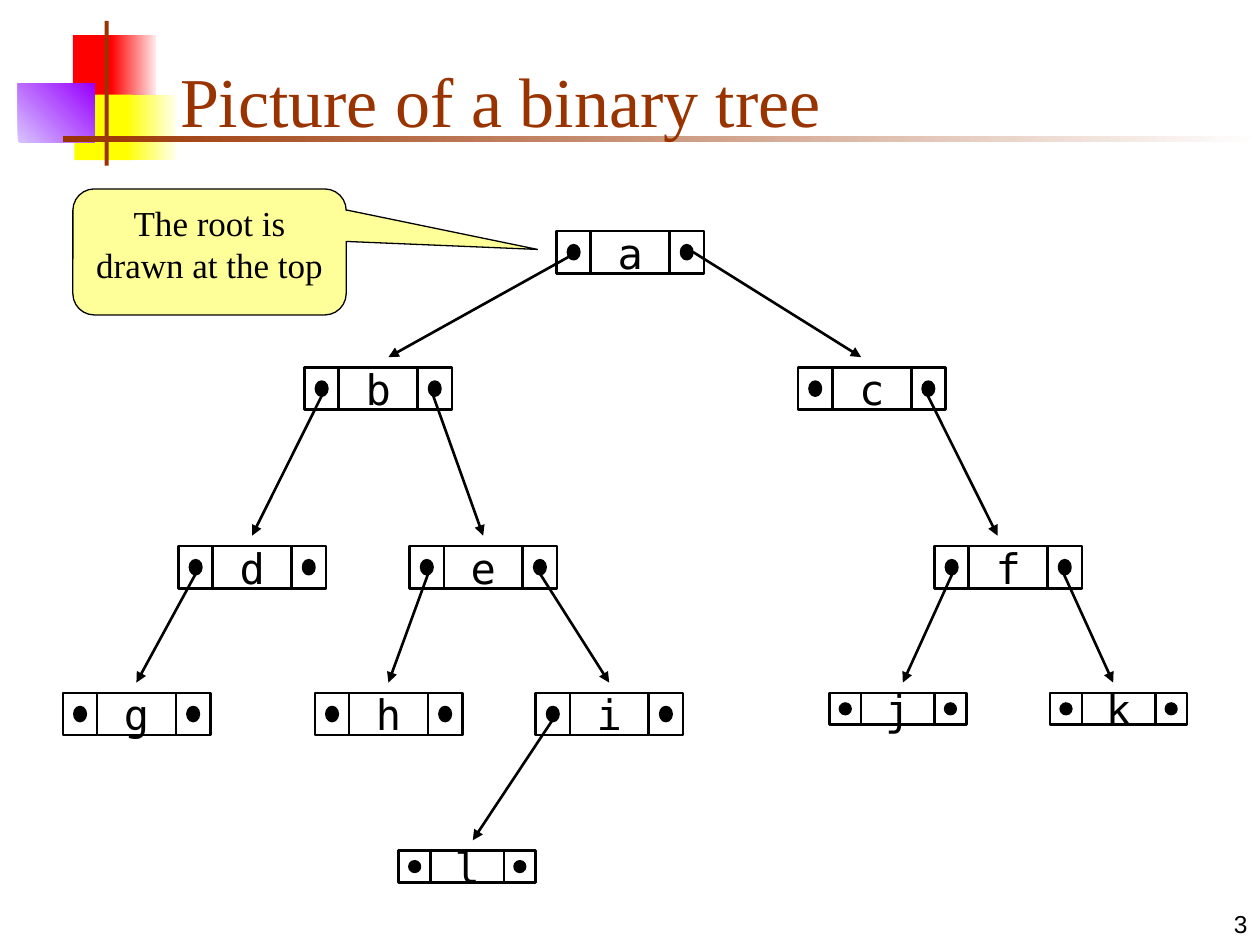
from lxml.etree import SubElement
from pptx import Presentation
from pptx.dml.color import RGBColor
from pptx.enum.shapes import MSO_CONNECTOR, MSO_SHAPE
from pptx.enum.text import MSO_ANCHOR, PP_ALIGN
from pptx.oxml.ns import qn
from pptx.util import Cm, Pt

COLORS = {
    "black": "000000",
    "white": "FFFFFF",
    "red": "FF0000",
    "pale_red": "FFEAEA",
    "yellow": "FFFF00",
    "pale_yellow": "FFFFF0",
    "lilac": "D8C4FF",
    "purple": "9900FF",
    "brown": "993300",
    "note": "FFFF99",
}

FORMATS = {
    "title": {"name": "Times New Roman", "size": Pt(40)},
    "note": {"name": "Times New Roman", "size": Pt(20)},
    "node": {"name": "DejaVu Sans Mono", "size": Pt(24)},
    "number": {"name": "Arial", "size": Pt(14)},
}

ORNAMENTS = [
    (1.47, 0.71, 0.89, 1.32, ["red"], 0),
    (2.24, 0.71, 0.91, 1.32, ["red", "pale_red"], 0),
    (1.5, 1.91, 1.17, 1.32, ["yellow"], 0),
    (2.54, 1.91, 1.02, 1.32, ["yellow", "pale_yellow"], 0),
    (0.36, 1.69, 1.55, 1.18, ["lilac", "purple"], 45),
    (2.11, 0.42, 0.08, 2.92, ["brown"], 0),
    (1.27, 2.74, 24.13, 0.13, ["brown", "white"], 0),
]

LARGE = {"pointer": 0.69, "value": 1.59, "height": 0.85}
SMALL = {"pointer": 0.64, "value": 1.48, "height": 0.64}

LEVEL_TOPS = [4.66, 7.41, 11.01, 13.97, 17.15]

NODES = {
    "a": (0, 11.22, LARGE),
    "b": (1, 6.14, LARGE),
    "c": (1, 16.09, LARGE),
    "d": (2, 3.6, LARGE),
    "e": (2, 8.26, LARGE),
    "f": (2, 18.84, LARGE),
    "g": (3, 1.27, LARGE),
    "h": (3, 6.35, LARGE),
    "i": (3, 10.8, LARGE),
    "j": (3, 16.72, SMALL),
    "k": (3, 21.17, SMALL),
    "l": (4, 8.04, SMALL),
}

EDGES = [
    ("a", 11.64, 7.83),
    ("a", 13.97, 17.36),
    ("b", 6.56, 5.08),
    ("b", 8.68, 9.74),
    ("c", 18.63, 20.11),
    ("d", 4.02, 2.75),
    ("e", 8.68, 7.83),
    ("e", 10.8, 12.28),
    ("f", 19.26, 18.2),
    ("f", 21.38, 22.44),
    ("i", 11.22, 9.53),
]
EDGE_DROP = 0.42
ARROW_GAP = 0.21


def rgb(color):
    return RGBColor.from_string(COLORS[color])


def add_figure(shapes, kind, left, top, width, height, fill=None, line=None):
    figure = shapes.add_shape(kind, Cm(left), Cm(top), Cm(width), Cm(height))
    figure.shadow.inherit = False
    if fill:
        figure.fill.solid()
        figure.fill.fore_color.rgb = rgb(fill)
    else:
        figure.fill.background()
    if line:
        figure.line.color.rgb = rgb("black")
        figure.line.width = Pt(line)
    else:
        figure.line.fill.background()
    return figure


def write(holder, wording, style, color="black", align=PP_ALIGN.LEFT,
          anchor=MSO_ANCHOR.BOTTOM, wrap=True):
    frame = holder.text_frame
    frame.word_wrap = wrap
    frame.vertical_anchor = anchor
    paragraph = frame.paragraphs[0]
    paragraph.alignment = align
    run = paragraph.add_run()
    run.text = wording
    for attribute, value in FORMATS[style].items():
        setattr(run.font, attribute, value)
    run.font.color.rgb = rgb(color)


def add_label(shapes, left, top, width, height, wording, style, **options):
    label = shapes.add_textbox(Cm(left), Cm(top), Cm(width), Cm(height))
    write(label, wording, style, **options)


def add_ornament(shapes, left, top, width, height, shades, angle):
    ornament = add_figure(shapes, MSO_SHAPE.RECTANGLE, left, top, width, height, shades[0])
    if len(shades) > 1:
        ornament.fill.gradient()
        ornament.fill.gradient_angle = angle
        for stop, shade, position in zip(ornament.fill.gradient_stops, shades, (0, 1)):
            stop.color.rgb = rgb(shade)
            stop.position = position


def add_pointer(shapes, left, top, width, height):
    add_figure(shapes, MSO_SHAPE.RECTANGLE, left, top, width, height, line=1.5)
    add_figure(shapes, MSO_SHAPE.OVAL, left + width / 3, top + height / 3,
               width / 3, height / 3, "black", 1.5)


def add_node(shapes, letter, level, left, size):
    node = shapes.add_group_shape().shapes
    top = LEVEL_TOPS[level]
    pointer, value, height = size["pointer"], size["value"], size["height"]
    for offset in (0, pointer + value):
        add_pointer(node, left + offset, top, pointer, height)
    value_cell = add_figure(node, MSO_SHAPE.FLOWCHART_PROCESS, left + pointer, top,
                            value, height, line=1.5)
    write(value_cell, letter, "node", align=PP_ALIGN.CENTER,
          anchor=MSO_ANCHOR.MIDDLE, wrap=False)


def add_edge(shapes, parent, start_x, end_x):
    level = NODES[parent][0]
    edge = shapes.add_connector(
        MSO_CONNECTOR.STRAIGHT,
        Cm(start_x), Cm(LEVEL_TOPS[level] + EDGE_DROP),
        Cm(end_x), Cm(LEVEL_TOPS[level + 1] - ARROW_GAP))
    edge.line.color.rgb = rgb("black")
    edge.line.width = Pt(1.5)
    SubElement(edge.line._get_or_add_ln(), qn("a:tailEnd"), type="triangle")
    SubElement(edge._element.spPr, qn("a:effectLst"))


def add_callout(shapes):
    callout = add_figure(shapes, MSO_SHAPE.ROUNDED_RECTANGULAR_CALLOUT,
                         1.47, 3.81, 5.51, 2.54, "note", 0.75)
    for index, adjustment in enumerate((1.2, -0.02, 0.17)):
        callout.adjustments[index] = adjustment
    write(callout, "The root is drawn at the top", "note",
          align=PP_ALIGN.CENTER, anchor=MSO_ANCHOR.TOP)


def main():
    presentation = Presentation()
    presentation.slide_width = Cm(25.4)
    presentation.slide_height = Cm(19.05)
    shapes = presentation.slides.add_slide(presentation.slide_layouts[6]).shapes

    for ornament in ORNAMENTS:
        add_ornament(shapes, *ornament)
    add_label(shapes, 20.12, 17.78, 5.28, 1.27, "3", "number", align=PP_ALIGN.RIGHT)
    add_label(shapes, 3.38, 0.64, 21.64, 2.33, "Picture of a binary tree", "title",
              color="brown")
    for letter, placing in NODES.items():
        add_node(shapes, letter, *placing)
    for edge in EDGES:
        add_edge(shapes, *edge)
    add_callout(shapes)

    presentation.save("out.pptx")


if __name__ == "__main__":
    main()
